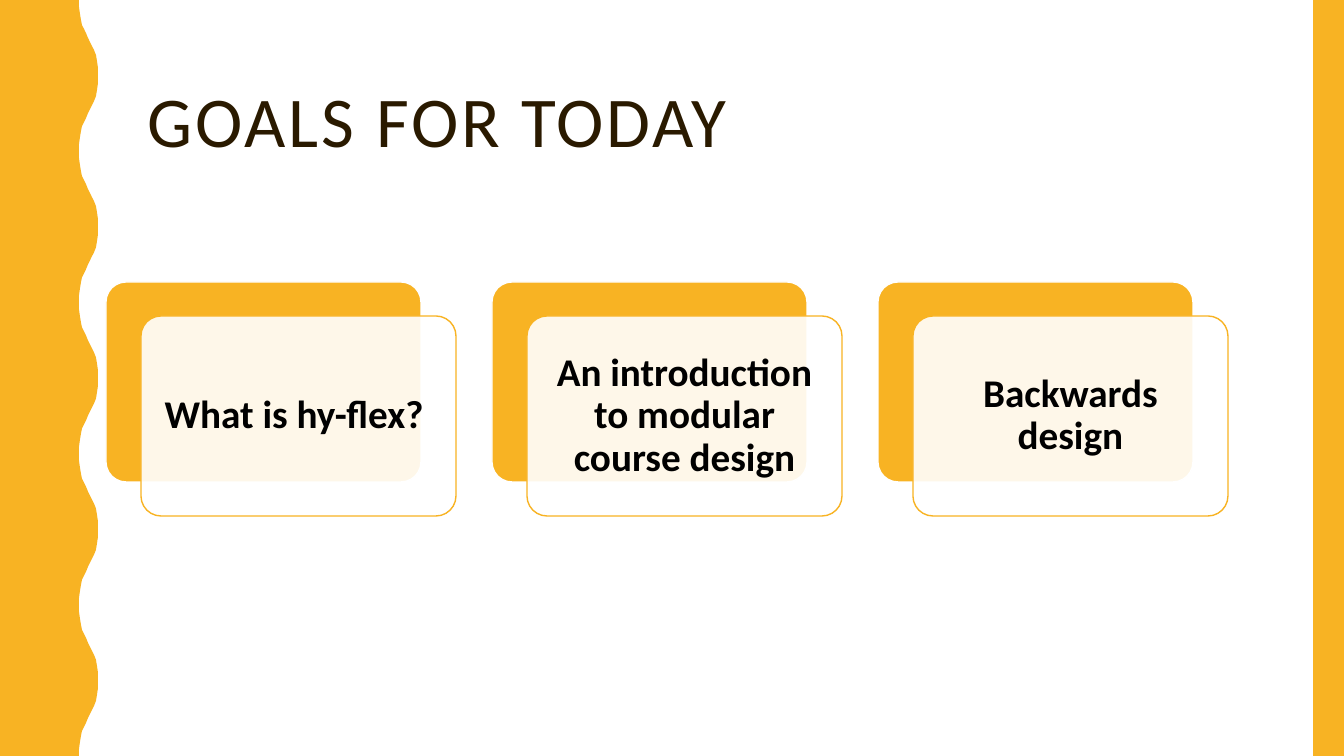
from lxml import etree
from pptx import Presentation
from pptx.dml.color import RGBColor
from pptx.enum.shapes import MSO_SHAPE
from pptx.enum.text import MSO_ANCHOR, MSO_AUTO_SIZE, PP_ALIGN
from pptx.oxml.ns import qn
from pptx.util import Pt

RECT, ROUND = MSO_SHAPE.RECTANGLE, MSO_SHAPE.ROUNDED_RECTANGLE
LEFT, CENTER = PP_ALIGN.LEFT, PP_ALIGN.CENTER
MIDDLE, FIXED = MSO_ANCHOR.MIDDLE, MSO_AUTO_SIZE.NONE

TITLE = "GOALS FOR TODAY "
GOALS = [
    "What is hy-flex? ",
    "An introduction to modular course design",
    "Backwards design",
]
COLORS = {"gold": "F8B323", "brown": "2A1A00", "white": "FFFFFF", "black": "000000"}
FONT = "Calibri"
SCALE = 914400 / 100.8
WIDE, HIGH = 1344, 756
WAVES = 5
CURVE = [(79, 0), (79, 7), (80, 14), (81, 20), (82, 25), (84, 29), (86, 33),
         (88, 38), (90, 42), (92, 46), (94, 50), (96, 55), (97, 61), (98, 68)]
CREST = 98
CARD = {"left": 106, "top": 282, "wide": 315, "high": 200, "pitch": 386}
SHIFT = (35, 34)


def px(n):
    return round(n * SCALE)


def color(name):
    return RGBColor.from_string(COLORS[name])


def write(shape, text, size, ink, align, inset, bold=False, space=0):
    frame = shape.text_frame
    frame.word_wrap = True
    frame.auto_size = FIXED
    frame.vertical_anchor = MIDDLE
    frame.margin_left = frame.margin_right = px(inset)
    frame.margin_top = frame.margin_bottom = px(inset)
    para = frame.paragraphs[0]
    para.alignment = align
    para.line_spacing = 0.9
    run = para.add_run()
    run.text = text
    run.font.name = FONT
    run.font.size = Pt(size)
    run.font.bold = bold
    run.font.color.rgb = color(ink)
    if space:
        run.font._element.set("spc", str(space * 100))


def paint(shape, fill, line=None, alpha=None):
    shape.shadow.inherit = False
    shape.fill.solid()
    shape.fill.fore_color.rgb = color(fill)
    if line:
        shape.line.color.rgb = color(line)
        shape.line.width = Pt(1)
    else:
        shape.line.fill.background()
    if alpha:
        tone = shape._element.spPr.find(qn("a:solidFill"))[0]
        etree.SubElement(tone, qn("a:alpha")).set("val", str(alpha * 1000))


def box(slide, kind, x, y, w, h, **style):
    shape = slide.shapes.add_shape(kind, px(x), px(y), px(w), px(h))
    if kind == ROUND:
        shape.adjustments[0] = 0.1
    paint(shape, **style)
    return shape


def wave(slide):
    step = HIGH / WAVES
    cycle = CURVE + [(CREST, step / 2)] + [(x, step - y) for x, y in CURVE[:0:-1]]
    edge = [(px(x), px(y + i * step)) for i in range(WAVES) for x, y in cycle]
    edge += [(px(CURVE[0][0]), px(HIGH)), (0, px(HIGH))]
    path = slide.shapes.build_freeform(0, 0, scale=1.0)
    path.add_line_segments(edge, close=True)
    paint(path.convert_to_shape(), "gold")


def main():
    deck = Presentation()
    deck.slide_width, deck.slide_height = px(WIDE), px(HIGH)
    slide = deck.slides.add_slide(deck.slide_layouts[5])
    title = slide.shapes.title
    title.left, title.top, title.width, title.height = map(px, (138, 42, 1122, 164))
    write(title, TITLE, 51, "brown", LEFT, 10, space=2)
    wave(slide)
    box(slide, RECT, 1313, 0, WIDE - 1313, HIGH, fill="gold")
    for i, goal in enumerate(GOALS):
        x, y = CARD["left"] + i * CARD["pitch"], CARD["top"]
        size = CARD["wide"], CARD["high"]
        box(slide, ROUND, x, y, *size, fill="gold", line="white")
        front = box(slide, ROUND, x + SHIFT[0], y + SHIFT[1], *size,
                    fill="white", line="gold", alpha=90)
        write(front, goal, 28, "black", CENTER, 12, bold=True)
    deck.save("out.pptx")


if __name__ == "__main__":
    main()
